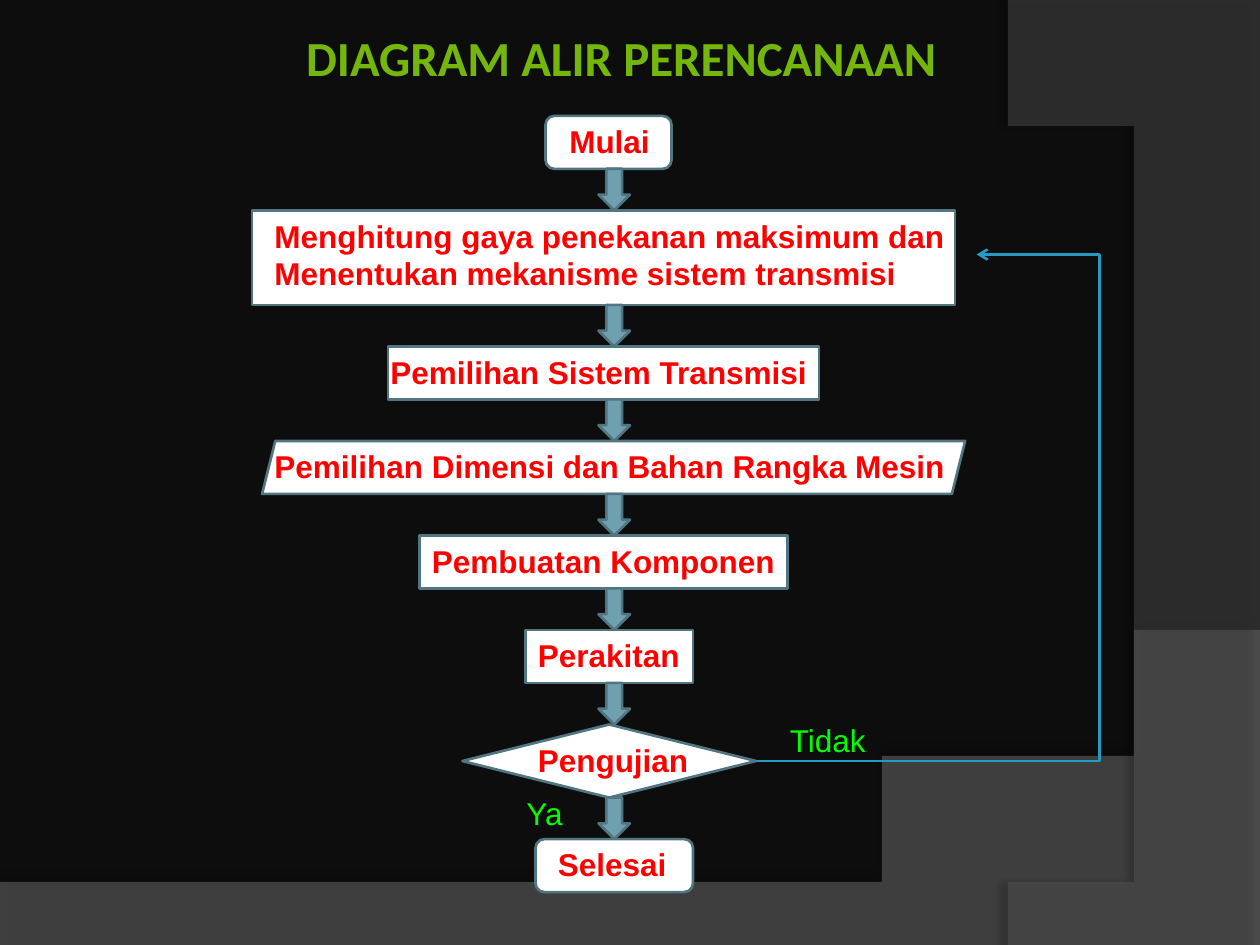
from lxml import etree
from pptx import Presentation
from pptx.dml.color import RGBColor
from pptx.enum import shapes, text
from pptx.oxml.ns import qn
from pptx.util import Inches, Pt

THEME = dict(back="0D0D0D", box="FFFFFF", edge="517682", arrow="6EA0B0",
             loop="239BC2", step="FF0000", note="00FF00", head="74B60A",
             font="Arial", title="Calibri", size=18, big=28, line=1.5)
KIND = shapes.MSO_SHAPE

# Steps: lines, shape, box left, width, height, text left, width, text drop
STEPS = [
    (["Mulai"], KIND.ROUNDED_RECTANGLE, 4.33, 1, 0.42, 4.42, 0.92, 0),
    (["Menghitung gaya penekanan maksimum dan",
      "Menentukan mekanisme sistem transmisi"],
     KIND.RECTANGLE, 2, 5.58, 0.75, 2.08, 5.67, 0),
    (["Pemilihan Sistem Transmisi"],
     KIND.RECTANGLE, 3.08, 3.42, 0.42, 3, 3.75, 0),
    (["Pemilihan Dimensi dan Bahan Rangka Mesin"],
     KIND.PARALLELOGRAM, 2.08, 5.58, 0.42, 2.08, 5.67, 0),
    (["Pembuatan Komponen"], KIND.RECTANGLE, 3.33, 2.92, 0.42, 3.33, 3, 0),
    (["Perakitan"], KIND.RECTANGLE, 4.17, 1.33, 0.42, 4.17, 1.5, 0),
    (["Pengujian"], KIND.DIAMOND, 3.67, 2.33, 0.58, 4.17, 1.42, 0.08),
    (["Selesai"], KIND.ROUNDED_RECTANGLE, 4.25, 1.25, 0.42, 4.33, 1.17, 0),
]
NOTES = [("Tidak", 6.17, 5.67, 0.92), ("Ya", 4.08, 6.25, 0.58)]
TOP, GAP = 0.92, 0.33

# Backdrop waves: points before the curve, its three controls, points after,
# colour, opacity, shadow opacity, shadow direction
WAVES = [
    ([(0, 7.05), (0, 7.5), (10, 7.5), (10, 5.2)],
     [(5.59, 7.29), (3.91, 7.19), (0, 7.05)], "7F7F7F", 45, 35, 270),
    ([(10, 0.02), (10, 7.5), (8.21, 7.5)],
     [(9.35, 6.19), (10.18, 3), (8, 0)], "5E5E5E", 40, 45, 180),
]


def rgb(code):
    return RGBColor.from_string(code)


def place(item, x, y, w, h):
    item.left, item.top, item.width, item.height = map(Inches, (x, y, w, h))


def write(frame, lines, color=THEME["step"], font=THEME["font"],
          size=THEME["size"], bold=True):
    frame.word_wrap = True
    frame.auto_size = text.MSO_AUTO_SIZE.NONE
    frame.vertical_anchor = text.MSO_ANCHOR.TOP
    for i, line in enumerate(lines):
        para = frame.add_paragraph() if i else frame.paragraphs[0]
        para.alignment = text.PP_ALIGN.LEFT
        run = para.add_run()
        run.text = line
        face = run.font
        face.name, face.size, face.bold = font, Pt(size), bold
        face.color.rgb = rgb(color)


def label(slide, lines, x, y, w, h=0.4, **style):
    box = slide.shapes.add_textbox(*map(Inches, (x, y, w, h)))
    write(box.text_frame, lines, **style)


def shape(slide, kind, x, y, w, h, fill):
    item = slide.shapes.add_shape(kind, *map(Inches, (x, y, w, h)))
    item.shadow.inherit = False
    item.fill.solid()
    item.fill.fore_color.rgb = rgb(fill)
    item.line.color.rgb = rgb(THEME["edge"])
    item.line.width = Pt(THEME["line"])
    return item


def bezier(ends, count=48):
    for i in range(1, count + 1):
        t = i / count
        parts = ((1 - t) ** 3, 3 * t * (1 - t) ** 2, 3 * t * t * (1 - t), t ** 3)
        yield tuple(sum(k * p[axis] for k, p in zip(parts, ends))
                    for axis in (0, 1))


def wave(slide, points, curve, color, alpha, shade, angle):
    outline = points + list(bezier([points[-1]] + curve))
    pen = slide.shapes.build_freeform(*outline[0], scale=Inches(1))
    pen.add_line_segments(outline[1:])
    item = pen.convert_to_shape()
    item.line.fill.background()
    item.fill.solid()
    item.fill.fore_color.rgb = rgb(color)
    tint = item.fill._xPr.find(qn("a:solidFill"))[0]
    etree.SubElement(tint, qn("a:alpha"), val=str(alpha * 1000))
    # Soft outer shadow
    item.shadow.inherit = False
    cast = etree.SubElement(
        item._element.spPr.find(qn("a:effectLst")), qn("a:outerShdw"),
        blurRad=str(Pt(4)), dist=str(Pt(4)), dir=str(angle * 60000),
        algn="ctr", rotWithShape="0")
    dark = etree.SubElement(cast, qn("a:srgbClr"), val="000000")
    etree.SubElement(dark, qn("a:alpha"), val=str(shade * 1000))


def loop(slide, start):
    line = slide.shapes.add_connector(
        shapes.MSO_CONNECTOR.ELBOW, *map(Inches, (6, 6.04, 7.75, 2.02)))
    line.begin_connect(start, 3)
    line.line.color.rgb = rgb(THEME["loop"])
    line.line.width = Pt(THEME["line"])
    props = line._element.spPr
    bend = props.find(qn("a:prstGeom")).find(qn("a:avLst"))
    etree.SubElement(bend, qn("a:gd"), name="adj1", fmla="val 155800")
    etree.SubElement(props.find(qn("a:ln")), qn("a:tailEnd"), type="arrow")
    etree.SubElement(props, qn("a:effectLst"))


def main():
    deck = Presentation()
    deck.slide_width, deck.slide_height = Inches(10), Inches(7.5)
    slide = deck.slides.add_slide(deck.slide_layouts[5])
    slide.background.fill.solid()
    slide.background.fill.fore_color.rgb = rgb(THEME["back"])
    for item in WAVES:
        wave(slide, *item)

    # Title
    title = slide.shapes.title
    place(title, 2.33, 0.17, 6.25, 0.57)
    write(title.text_frame, ["DIAGRAM ALIR PERENCANAAN"], color=THEME["head"],
          font=THEME["title"], size=THEME["big"])

    # Steps from top to bottom, with an arrow in each gap
    y, boxes = TOP, []
    for lines, kind, x, w, h, left, wide, drop in STEPS:
        if boxes:
            shape(slide, KIND.DOWN_ARROW, 4.75, y - GAP, 0.25, GAP,
                  THEME["arrow"])
        boxes.append(shape(slide, kind, x, y, w, h, THEME["box"]))
        label(slide, lines, left, y + drop, wide, 0.1 + 0.3 * len(lines))
        y += h + GAP

    # Way back from the test, and its answers
    loop(slide, boxes[-2])
    for word, x, y, w in NOTES:
        label(slide, [word], x, y, w, color=THEME["note"], bold=False)
    deck.save("out.pptx")


if __name__ == "__main__":
    main()
